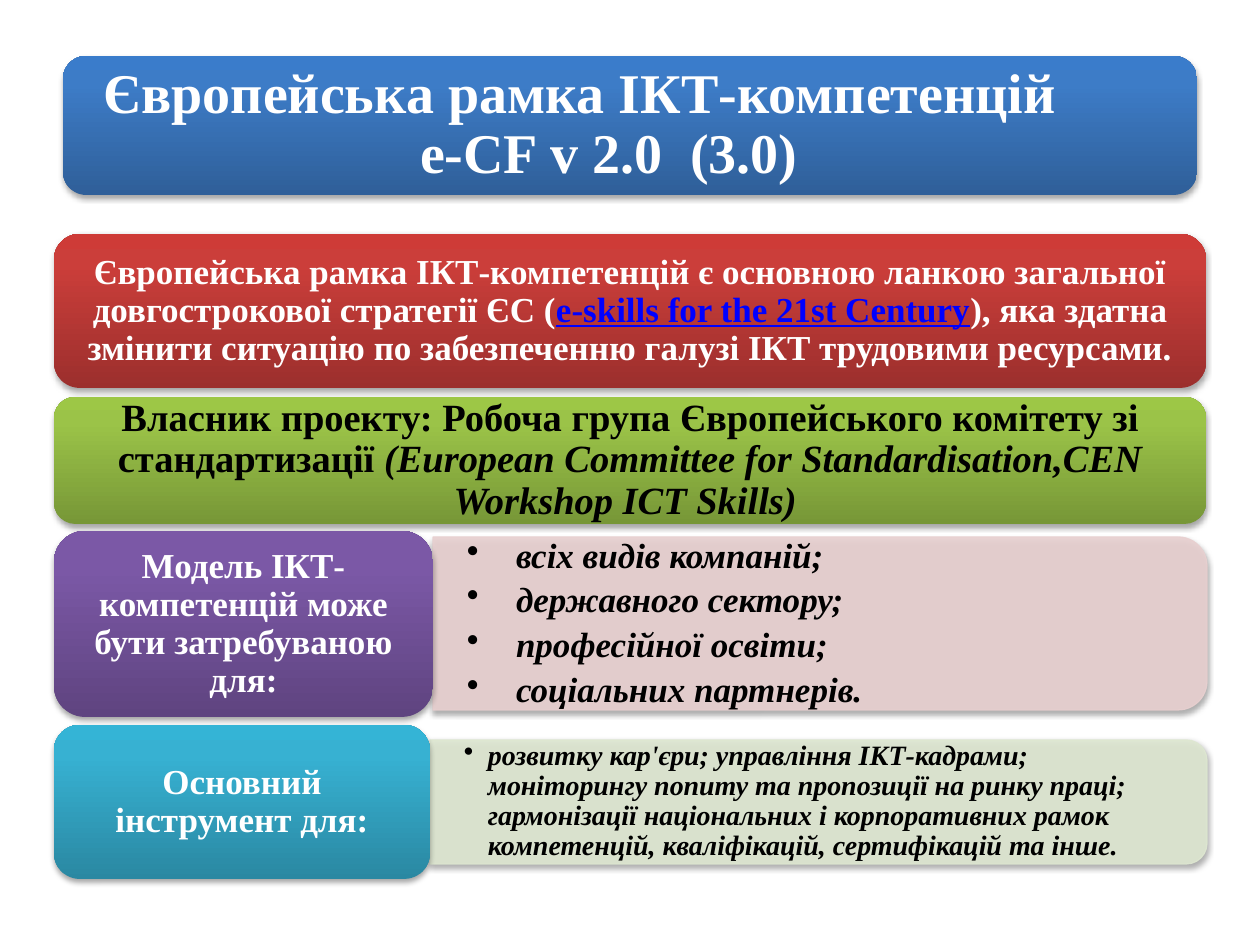
from dataclasses import dataclass

import pptx
import pptx.dml.color
import pptx.enum.shapes
import pptx.enum.text
import pptx.oxml
import pptx.oxml.ns
import pptx.util

EMU_PER_PX = 914400 / 126
FONT = "Times New Roman"
WHITE, BLACK, LINK = "FFFFFF", "000000", "0000FF"
NS = pptx.oxml.ns.nsdecls("a")
SHAPES = pptx.enum.shapes.MSO_SHAPE
CENTER = pptx.enum.text.PP_ALIGN.CENTER
LEFT = pptx.enum.text.PP_ALIGN.LEFT


@dataclass(frozen=True)
class Box:
    x: int
    y: int
    w: int
    h: int


@dataclass(frozen=True)
class Run:
    text: str
    color: str = WHITE
    italic: bool = False
    underline: bool = False


@dataclass(frozen=True)
class Card:
    box: Box
    gradient: tuple[str, str, str]  # bottom, 80 %, top
    runs: tuple[Run, ...] = ()
    size: int = 20


@dataclass(frozen=True)
class Panel:
    box: Box
    color: str
    text_box: Box
    items: tuple[str, ...]
    size: int
    indent: int


TITLE_BOX = Box(69, 63, 1121, 125)
TITLE_CARD = Card(Box(63, 56, 1134, 139), ("2F5F99", "3D7CC7", "3A7CCB"))

PANELS = (
    Panel(Box(433, 537, 774, 173), "E8D0D0", Box(433, 546, 765, 156),
          ("всіх видів компаній;", "державного сектору;",
           "професійної освіти;", "соціальних партнерів."), 20, 49),
    Panel(Box(430, 740, 777, 124), "DEE7D1", Box(430, 746, 771, 111),
          ("розвитку кар'єри; управління ІКТ-кадрами; моніторингу попиту та "
           "пропозиції на ринку праці; гармонізації національних і "
           "корпоративних рамок компетенцій, кваліфікацій, сертифікацій "
           "та інше.",), 16, 24),
)

CARDS = (
    Card(Box(54, 234, 1152, 154), ("9C2F2D", "CB3E3A", "CE3B37"), (
        Run("Європейська рамка ІКТ-компетенцій є основною ланкою загальної "
            "довгострокової стратегії ЄС ("),
        Run("e-skills for the 21st Century", LINK, underline=True),
        Run("), яка здатна змінити ситуацію по забезпеченню галузі ІКТ "
            "трудовими ресурсами."))),
    Card(Box(54, 397, 1152, 127), ("779737", "9BC348", "9DC746"), (
        Run("Власник проекту: Робоча група Європейського комітету зі "
            "стандартизації ", BLACK),
        Run("(European Committee for Standardisation,CEN Workshop ICT "
            "Skills) ", BLACK, italic=True)), 22),
    Card(Box(54, 531, 379, 186), ("5F4480", "7B58A6", "7C57A8"),
         (Run("Модель ІКТ-компетенцій може бути затребуваною для:"),)),
    Card(Box(54, 725, 376, 154), ("2A88A2", "37B1D2", "34B4D6"),
         (Run("Основний інструмент для:"),)),
)


def px(n: float) -> pptx.util.Emu:
    return pptx.util.Emu(round(n * EMU_PER_PX))


def rgb(value: str) -> pptx.dml.color.RGBColor:
    return pptx.dml.color.RGBColor.from_string(value)


def place(box: Box) -> tuple:
    return px(box.x), px(box.y), px(box.w), px(box.h)


def add_shadow(sp) -> None:
    sp.shadow.inherit = False
    effects = sp.element.spPr.find(pptx.oxml.ns.qn("a:effectLst"))
    effects.append(pptx.oxml.parse_xml(
        f'<a:outerShdw {NS} blurRad="40000" dist="23000" dir="5400000" rotWithShape="0">'
        '<a:srgbClr val="000000"><a:alpha val="35000"/></a:srgbClr></a:outerShdw>'))


def set_gradient(sp, colors: tuple[str, str, str]) -> None:
    stops = "".join(f'<a:gs pos="{pos}"><a:srgbClr val="{color}"/></a:gs>'
                    for pos, color in zip((0, 80000, 100000), colors))
    sp.element.spPr.append(pptx.oxml.parse_xml(
        f'<a:gradFill {NS} rotWithShape="1"><a:gsLst>{stops}</a:gsLst>'
        '<a:lin ang="16200000" scaled="0"/></a:gradFill>'))


def set_frame(sp, left: int, top: int, right: int, bottom: int):
    tf = sp.text_frame
    tf.word_wrap = True
    tf.auto_size = pptx.enum.text.MSO_AUTO_SIZE.NONE
    tf.vertical_anchor = pptx.enum.text.MSO_ANCHOR.MIDDLE
    tf.margin_left, tf.margin_top = px(left), px(top)
    tf.margin_right, tf.margin_bottom = px(right), px(bottom)
    return tf


def format_paragraph(p, *, align=CENTER, after: int = 0, left: int = 0,
                     bullet: bool = False) -> None:
    p.alignment = align
    p.line_spacing = 0.9
    p.space_before, p.space_after = pptx.util.Pt(0), pptx.util.Pt(after)
    p_pr = p._p.get_or_add_pPr()
    p_pr.set("marL", str(px(left)))
    p_pr.set("indent", str(px(-left if bullet else 0)))
    if bullet:
        p.level = 1
        p_pr.append(pptx.oxml.parse_xml(f'<a:buChar {NS} char="•"/>'))


def add_text(p, text: str, *, size: int, color: str = WHITE,
             italic: bool = False, underline: bool = False) -> None:
    r = p.add_run()
    r.text = text
    font = r.font
    font.name, font.size, font.bold = FONT, pptx.util.Pt(size), True
    font.italic, font.underline = italic, underline
    font.color.rgb = rgb(color)


def add_card(shapes, card: Card):
    sp = shapes.add_shape(SHAPES.ROUNDED_RECTANGLE, *place(card.box))
    set_gradient(sp, card.gradient)
    sp.line.fill.background()
    add_shadow(sp)
    if card.runs:
        p = set_frame(sp, 10, 5, 10, 5).paragraphs[0]
        format_paragraph(p)
        for run in card.runs:
            add_text(p, run.text, size=card.size, color=run.color,
                     italic=run.italic, underline=run.underline)
    return sp


def add_panel(shapes, panel: Panel) -> None:
    """Draw a panel rounded on its right side, with a bulleted list over it."""
    box = panel.box
    shift = (box.w - box.h) / 2
    sp = shapes.add_shape(SHAPES.ROUND_2_SAME_RECTANGLE, px(box.x + shift),
                          px(box.y - shift), px(box.h), px(box.w))
    sp.rotation = 90
    sp.fill.solid()
    sp.fill.fore_color.rgb = rgb(panel.color)
    sp.line.color.rgb = rgb(panel.color)
    sp.line.width = pptx.util.Pt(0.75)
    for color in sp.element.spPr.iter(pptx.oxml.ns.qn("a:srgbClr")):
        color.append(pptx.oxml.parse_xml(f'<a:alpha {NS} val="90000"/>'))
    add_shadow(sp)

    tf = set_frame(shapes.add_textbox(*place(panel.text_box)), 34, 18, 34, 18)
    for i, item in enumerate(panel.items):
        p = tf.add_paragraph() if i else tf.paragraphs[0]
        format_paragraph(p, align=LEFT, after=4, left=panel.indent, bullet=True)
        add_text(p, item, size=panel.size, color=BLACK, italic=True)


def add_title(slide) -> None:
    title = slide.shapes.title
    title.left, title.top, title.width, title.height = place(TITLE_BOX)
    add_card(slide.shapes, TITLE_CARD).element.addnext(title.element)
    tf = set_frame(title, 16, 16, 115, 16)
    lines = (("Європейська рамка ІКТ-компетенцій", 0), ("e-CF v 2.0  (3.0)", 58))
    for i, (text, left) in enumerate(lines):
        p = tf.add_paragraph() if i else tf.paragraphs[0]
        format_paragraph(p, left=left)
        add_text(p, text, size=32)


def main() -> None:
    prs = pptx.Presentation()
    prs.slide_width, prs.slide_height = px(1260), px(945)
    slide = prs.slides.add_slide(prs.slide_layouts[5])
    add_title(slide)
    for panel in PANELS:
        add_panel(slide.shapes, panel)
    for card in CARDS:
        add_card(slide.shapes, card)
    prs.save("out.pptx")


if __name__ == "__main__":
    main()
